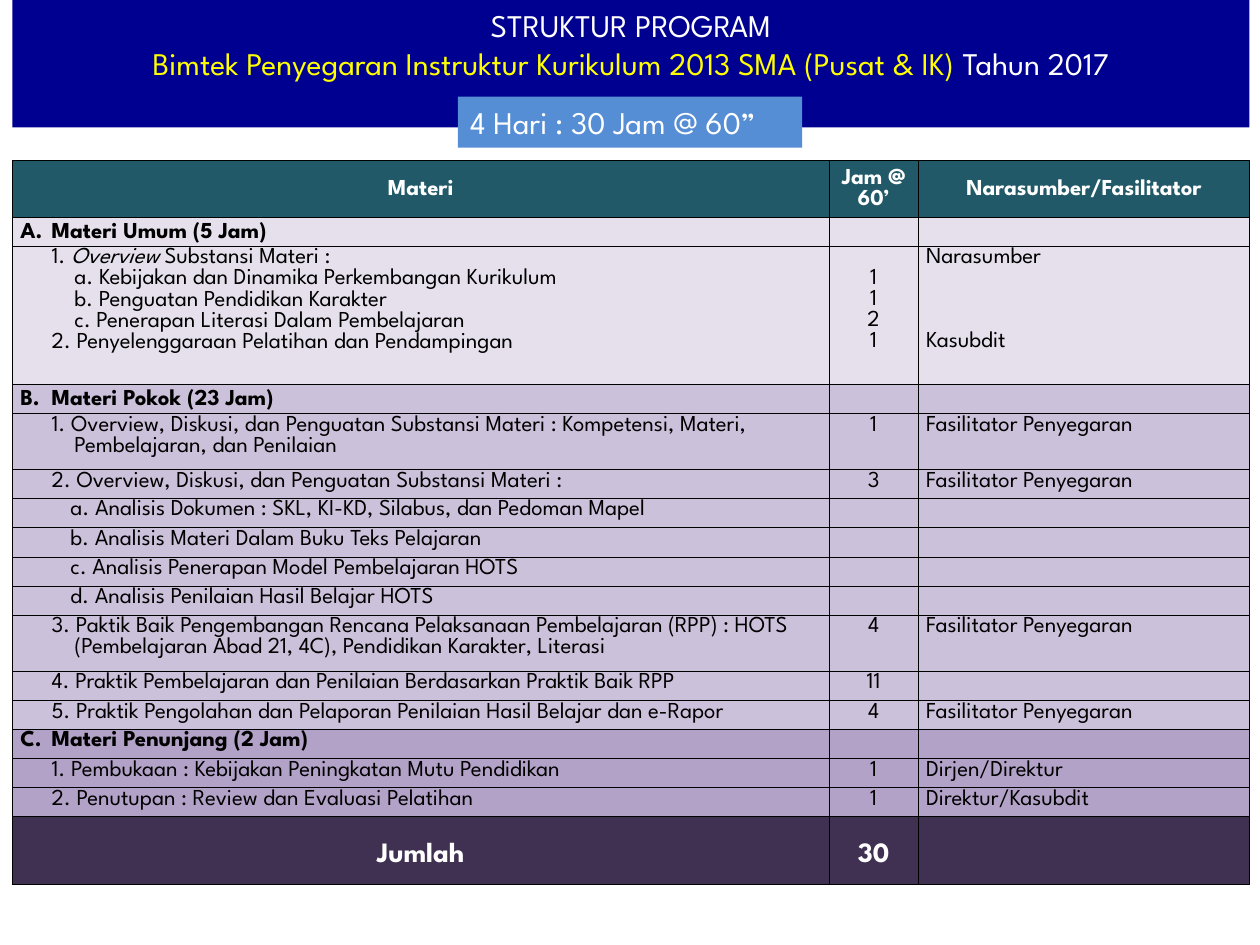
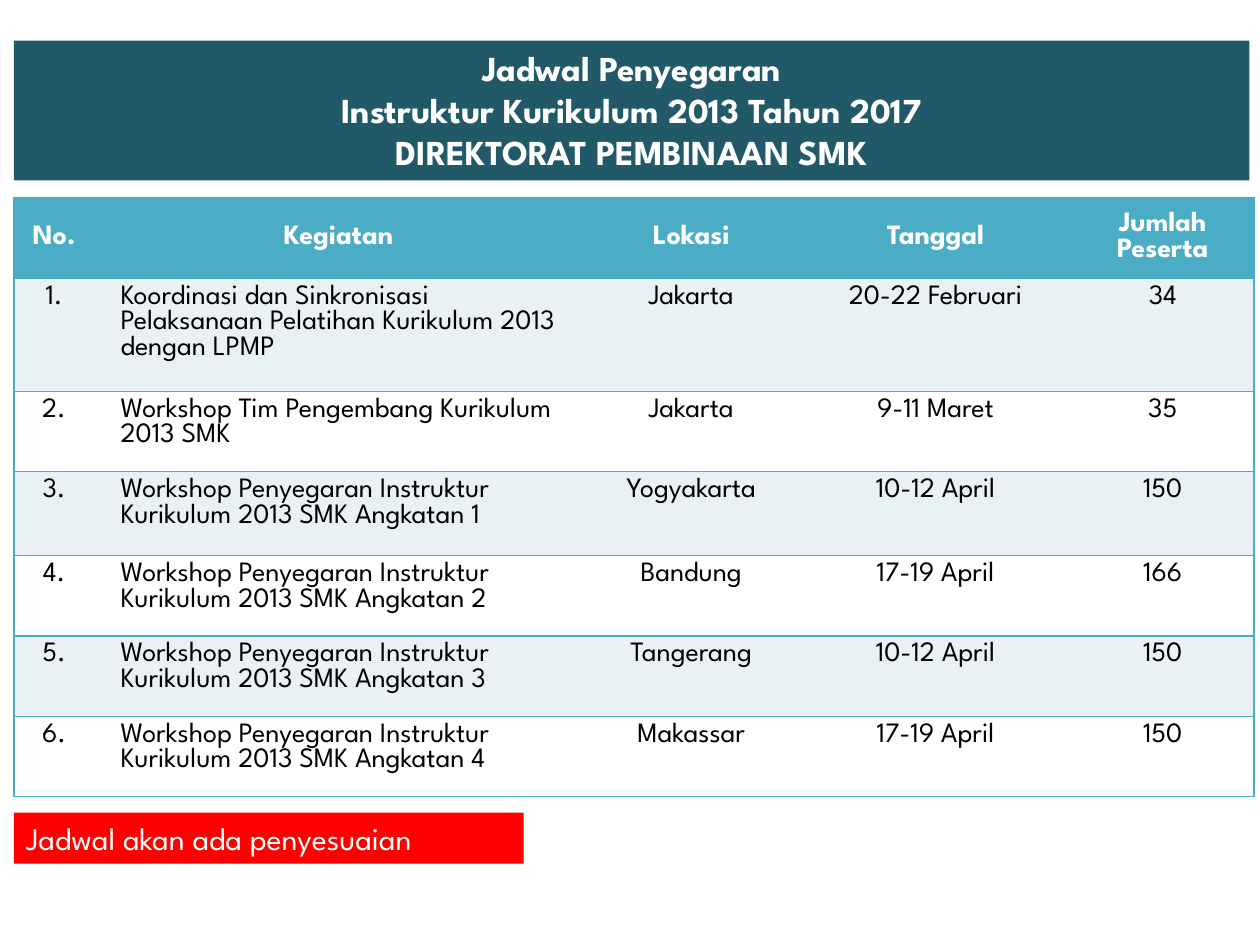
import dataclasses

import pptx
import pptx.dml.color
import pptx.enum.shapes
import pptx.enum.text
import pptx.oxml
import pptx.oxml.ns
import pptx.util
from pptx.util import Cm, Pt

COLOURS = {
    "white": "FFFFFF", "black": "000000", "navy": "000090", "yellow": "FFFF00",
    "blue": "558ED5", "teal": "215968", "cyan": "4BACC6", "pale": "E9F1F5",
    "red": "FF0000", "umum": "E6E0EC", "pokok": "CCC1DA",
    "penunjang": "B3A2C7", "total": "403152",
}
FONT = "League Spartan"
NO_STYLE = "{2D5ABB26-0587-4C30-8999-92F81FD0307C}"
CENTER = pptx.enum.text.PP_ALIGN.CENTER
LEFT = pptx.enum.text.PP_ALIGN.LEFT
MIDDLE = pptx.enum.text.MSO_ANCHOR.MIDDLE
TOP = pptx.enum.text.MSO_ANCHOR.TOP


@dataclasses.dataclass
class Line:
    """One paragraph: text or (text, font changes) runs, indents in cm."""
    runs: object
    left: float = 0
    hang: float = 0
    layout: dict = dataclasses.field(default_factory=dict)


def rgb(name):
    return pptx.dml.color.RGBColor.from_string(COLOURS[name])


def assign(target, values):
    for key, value in values.items():
        setattr(target, key, value)


def write(frame, lines, size, colour="black", bold=False, **layout):
    for number, line in enumerate(lines):
        line = line if isinstance(line, Line) else Line(line)
        paragraph = frame.add_paragraph() if number else frame.paragraphs[0]
        assign(paragraph, {**layout, **line.layout})
        properties = paragraph._p.get_or_add_pPr()
        properties.set("marL", str(Cm(line.left)))
        properties.set("indent", str(Cm(-line.hang)))
        runs = [(line.runs, {})] if isinstance(line.runs, str) else line.runs
        for text, changes in runs:
            run = paragraph.add_run()
            run.text = text
            values = {"name": FONT, "size": Pt(size), "bold": bold, **changes}
            run.font.color.rgb = rgb(values.pop("colour", colour))
            assign(run.font, values)


def band(slide, box, fill, lines, size, **style):
    shape = slide.shapes.add_shape(
        pptx.enum.shapes.MSO_SHAPE.RECTANGLE, *map(Cm, box))
    shape.shadow.inherit = False
    shape.fill.solid()
    shape.fill.fore_color.rgb = rgb(fill)
    shape.line.fill.background()
    assign(shape.text_frame, {"word_wrap": True, "vertical_anchor": TOP})
    write(shape.text_frame, lines, size, "white",
          line_spacing=Pt(size * 1.2), **style)


def plain_table(slide, left, top, widths, heights):
    table = slide.shapes.add_table(
        len(heights), len(widths), Cm(left), Cm(top),
        Cm(sum(widths)), Cm(sum(heights))).table
    assign(table, {"first_row": False, "horz_banding": False})
    table._tbl.tblPr.find(pptx.oxml.ns.qn("a:tableStyleId")).text = NO_STYLE
    for column, width in zip(table.columns, widths):
        column.width = Cm(width)
    for row, height in zip(table.rows, heights):
        row.height = Cm(height)
    return table


def fill_cell(cell, lines, fill, sides, border, points, size, margins,
              anchor=TOP, **style):
    """Borders go in before the fill, as the file format orders them."""
    properties = cell._tc.get_or_add_tcPr()
    for side in sides:
        properties.append(pptx.oxml.parse_xml(
            f'<a:ln{side} {pptx.oxml.ns.nsdecls("a")} w="{Pt(points)}">'
            f'<a:solidFill><a:srgbClr val="{COLOURS[border]}"/></a:solidFill>'
            f'</a:ln{side}>'))
    cell.fill.solid()
    cell.fill.fore_color.rgb = rgb(fill)
    edges = ("margin_left", "margin_top", "margin_right", "margin_bottom")
    assign(cell, dict(zip(edges, map(Cm, margins))))
    cell.vertical_anchor = anchor
    if lines:
        write(cell.text_frame, lines, size, **style)
    else:
        end = cell.text_frame.paragraphs[0]._p.get_or_add_endParaRPr()
        end.set("sz", str(size * 100))


def item(text, left=1.22, hang=0.46):
    return Line(text, left, hang)


def program_rows():
    """Rows of (kind, fill, height, materi lines, jam lines, narasumber lines)."""
    one, two = 0.58, 1.13
    trainer = "Fasilitator Penyegaran"
    overview = [
        Line([("1. ", {}), ("Overview ", {"italic": True}),
              ("Substansi Materi :", {})], 0.76),
        item("a. Kebijakan dan Dinamika Perkembangan Kurikulum", hang=0),
        item("b. Penguatan Pendidikan Karakter", hang=0),
        item("c. Penerapan Literasi Dalam Pembelajaran", hang=0),
        item("2. Penyelenggaraan Pelatihan dan Pendampingan"),
    ]
    analyses = [
        "a. Analisis Dokumen : SKL, KI-KD, Silabus, dan Pedoman Mapel",
        "b. Analisis Materi Dalam Buku Teks Pelajaran",
        "c. Analisis Penerapan Model Pembelajaran HOTS",
        "d. Analisis Penilaian Hasil Belajar HOTS",
    ]

    def section(fill, text):
        return ("section", fill, one, [Line(text, 0.76, 0.63)], [], [])

    def topic(fill, height, text, hours, speaker=None):
        return ("topic", fill, height, [item(text)], [hours],
                [Line(speaker, 0.13)] if speaker else [])

    return [
        ("header", "teal", 1.14, ["Materi"], ["Jam @ 60’"],
         ["Narasumber/Fasilitator"]),
        section("umum", "A.\tMateri Umum (5 Jam)"),
        ("overview", "umum", 2.78, overview, ["1", "1", "2", "1"],
         [Line("Narasumber", 0.13),
          Line("Kasubdit", 0.13, layout={"space_before": Pt(36)})]),
        section("pokok", "B.\tMateri Pokok (23 Jam)"),
        topic("pokok", two, "1. Overview, Diskusi, dan Penguatan Substansi Materi : "
              "Kompetensi, Materi, Pembelajaran, dan Penilaian", "1", trainer),
        topic("pokok", one, "2. Overview, Diskusi, dan Penguatan Substansi Materi :",
              "3", trainer),
        *[("topic", "pokok", one, [item(text, 1.14, 0)], [], [])
          for text in analyses],
        topic("pokok", two, "3. Paktik Baik Pengembangan Rencana Pelaksanaan "
              "Pembelajaran (RPP) : HOTS (Pembelajaran Abad 21, 4C), "
              "Pendidikan Karakter, Literasi", "4", trainer),
        topic("pokok", one, "4. Praktik Pembelajaran dan Penilaian Berdasarkan "
              "Praktik Baik RPP", "11"),
        topic("pokok", one, "5. Praktik Pengolahan dan Pelaporan Penilaian "
              "Hasil Belajar dan e-Rapor", "4", trainer),
        section("penunjang", "C.\tMateri Penunjang (2 Jam)"),
        topic("penunjang", one, "1. Pembukaan : Kebijakan Peningkatan Mutu Pendidikan",
              "1", "Dirjen/Direktur"),
        topic("penunjang", one, "2. Penutupan : Review dan Evaluasi Pelatihan",
              "1", "Direktur/Kasubdit"),
        ("total", "total", 1.37, ["Jumlah"], ["30"], []),
    ]


def program_table(slide, left, top):
    rows = program_rows()
    table = plain_table(slide, left, top, [16.46, 1.8, 6.68],
                        [row[2] for row in rows])
    for r, (kind, fill, _, *cells) in enumerate(rows):
        strong = kind in ("header", "total")
        for c, lines in enumerate(cells):
            inset = 0.03
            if kind == "total":
                inset = 0.54
            elif kind == "overview" and c == 1:
                inset = 0.45
            middle = kind == "header" or (kind == "section" and fill != "penunjang")
            fill_cell(
                table.cell(r, c), lines, fill, "LRTB", "black", 0.5,
                16 if kind == "total" else 13, (0.03, inset, 0.03, 0),
                anchor=MIDDLE if middle else TOP,
                colour="white" if strong else "black",
                bold=strong or kind == "section",
                alignment=CENTER if strong or c == 1 else LEFT)


def schedule_table(slide, left, top):
    refresher = "Workshop Penyegaran Instruktur Kurikulum 2013 SMK Angkatan "
    events = [
        ("Koordinasi dan Sinkronisasi Pelaksanaan Pelatihan Kurikulum 2013 "
         "dengan LPMP", "Jakarta", "20-22 Februari", "34"),
        ("Workshop Tim Pengembang Kurikulum 2013 SMK", "Jakarta",
         "9-11 Maret", "35"),
        (refresher + "1", "Yogyakarta", "10-12 April", "150"),
        (refresher + "2", "Bandung", "17-19 April", "166"),
        (refresher + "3", "Tangerang", "10-12 April", "150"),
        (refresher + "4", "Makassar", "17-19 April", "150"),
    ]
    rows = [("No.", "Kegiatan", "Lokasi", "Tanggal", "Jumlah Peserta")]
    rows += [(f"{n}.", *event) for n, event in enumerate(events, 1)]
    table = plain_table(slide, left, top, [1.62, 9.85, 4.37, 5.48, 3.68],
                        [1.63, 2.28, 1.62, 1.69, 1.62, 1.62, 1.62])
    for r, row in enumerate(rows):
        header = r == 0
        fill = "cyan" if header else "pale" if r % 2 else "white"
        for c, text in enumerate(row):
            activity = c == 1 and not header
            sides = {0: "LTB", len(row) - 1: "RTB"}.get(c, "TB")
            fill_cell(
                table.cell(r, c), [Line(text, 0.23 if activity else 0)], fill,
                sides, "cyan", 1, 16, (0.3, 0.13, 0.3, 0.13),
                anchor=MIDDLE if header else TOP,
                colour="white" if header else "black", bold=header,
                alignment=LEFT if activity else CENTER)


def program_slide(slide):
    program_table(slide, 0.25, 3.24)
    band(slide, (0.25, 0, 24.94, 2.57), "navy", [
        "STRUKTUR PROGRAM",
        [("Bimtek Penyegaran Instruktur Kurikulum 2013 SMA (Pusat & IK) ",
          {"colour": "yellow"}), ("Tahun 2017", {})],
    ], 18, alignment=CENTER)
    band(slide, (9.23, 1.95, 6.94, 1.03), "blue", ["4 Hari : 30 Jam @ 60”"],
         18, alignment=LEFT)


def schedule_slide(slide):
    schedule_table(slide, 0.28, 3.98)
    band(slide, (0.28, 0.82, 24.91, 2.82), "teal", [
        "Jadwal Penyegaran",
        "Instruktur Kurikulum 2013 Tahun 2017",
        "DIREKTORAT PEMBINAAN SMK",
    ], 20, bold=True, alignment=CENTER)
    band(slide, (0.28, 16.38, 10.28, 1.03), "red",
         ["Jadwal akan ada penyesuaian"], 18, alignment=LEFT)


def main():
    deck = pptx.Presentation()
    assign(deck, {"slide_width": Cm(25.4), "slide_height": Cm(19.05)})
    for build in (program_slide, schedule_slide):
        build(deck.slides.add_slide(deck.slide_layouts[6]))
    deck.save("out.pptx")


if __name__ == "__main__":
    main()
